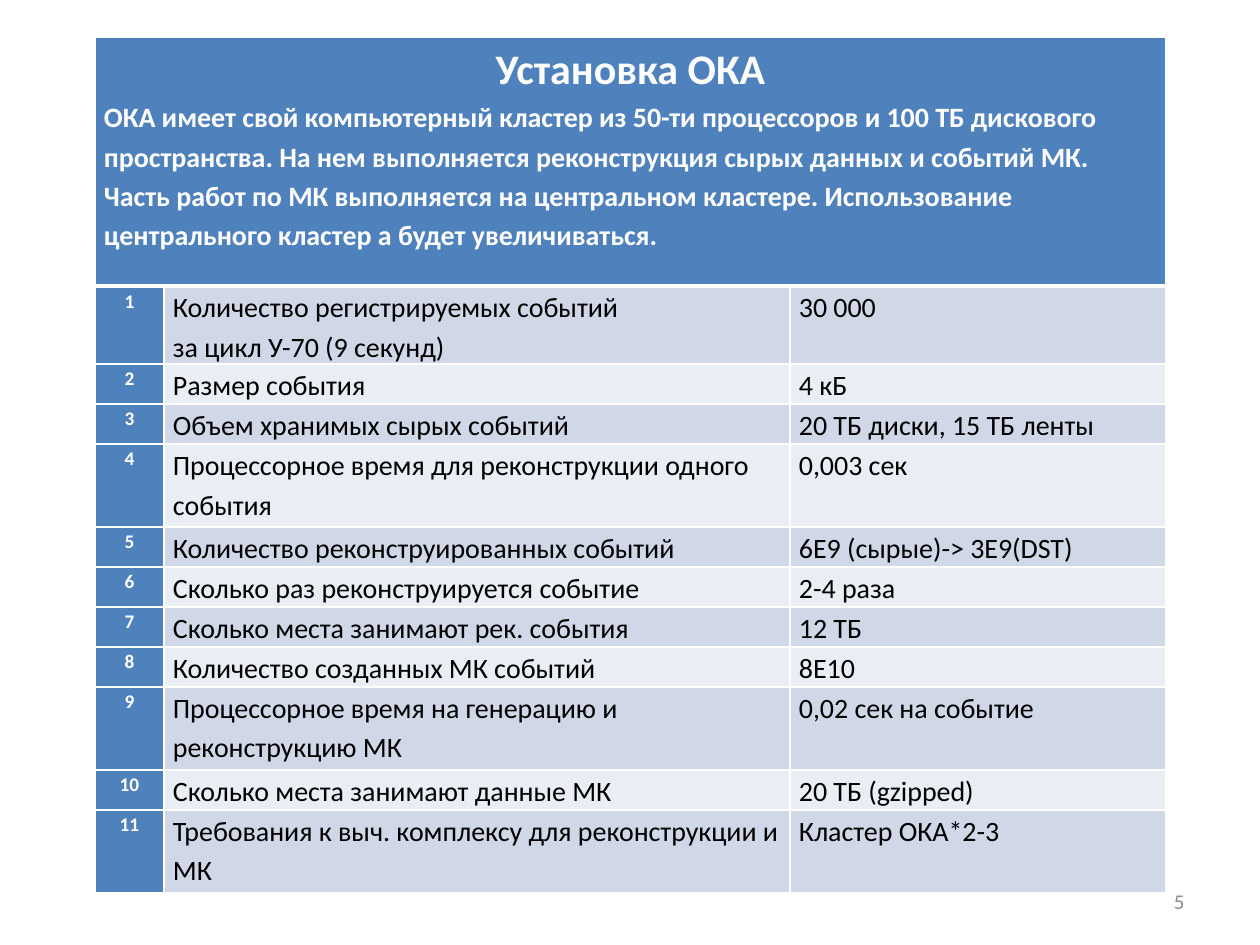
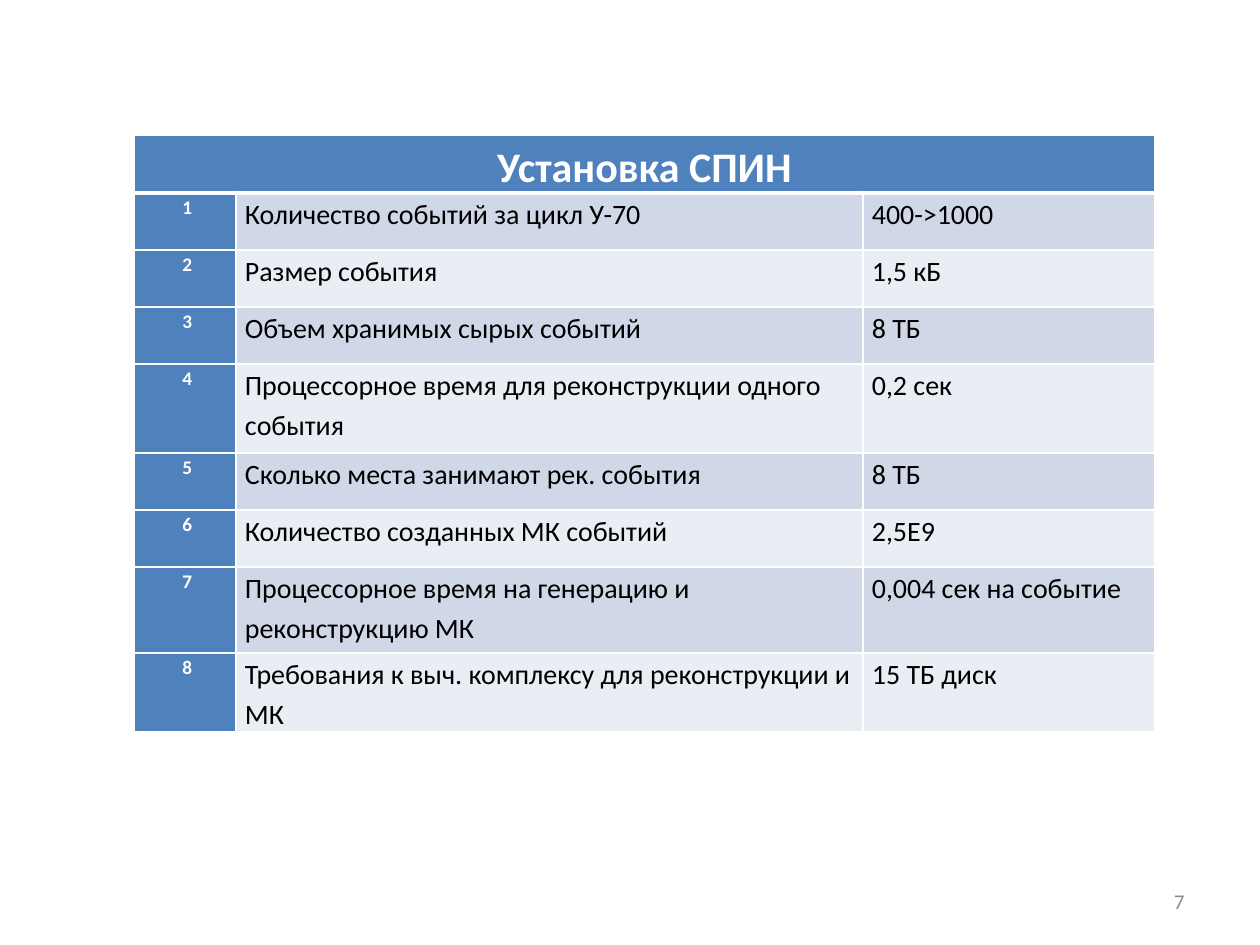
from lxml.etree import SubElement
from pptx import Presentation
from pptx.dml.color import RGBColor
from pptx.enum.text import MSO_ANCHOR as Anchor, PP_ALIGN as Align
from pptx.oxml.ns import qn
from pptx.util import Emu, Pt

ONE_LINE, TWO_LINES, ROOMY = 40, 83, 57
NO_BREAK_SPACE = chr(160)

# Each row: label lines, value, row height in px
SETUPS = [
    {
        "page_number": 5,
        "corner": (95, 37),
        "columns": (69, 626, 376),
        "title": "Установка ОКА",
        "summary": "ОКА имеет свой компьютерный кластер из 50-ти процессоров и 100 ТБ "
                   "дискового пространства. На нем выполняется реконструкция сырых данных "
                   "и событий МК. Часть работ по МК выполняется на центральном кластере. "
                   "Использование центрального кластер а будет увеличиваться.",
        "header_height": 249,
        "number_prefix": "",
        "rows": [
            (["Количество регистрируемых событий", "за цикл У-70 (9 секунд)"], "30 000", 78),
            (["Размер события"], "4 кБ", ONE_LINE),
            (["Объем хранимых сырых событий"], "20 ТБ диски, 15 ТБ ленты", ONE_LINE),
            (["Процессорное время для реконструкции одного события"], "0,003 сек", TWO_LINES),
            (["Количество реконструированных событий"], "6E9 (сырые)-> 3E9(DST)", ONE_LINE),
            (["Сколько раз реконструируется событие"], "2-4 раза", ONE_LINE),
            (["Сколько места занимают рек. события"], "12 TБ", ONE_LINE),
            (["Количество созданных МК событий"], "8E10", ONE_LINE),
            (["Процессорное время на генерацию и реконструкцию МК"],
             "0,02 сек на событие", TWO_LINES),
            (["Сколько места занимают данные МК"], "20 ТБ (gzipped)", ONE_LINE),
            (["Требования к выч. комплексу для реконструкции и МК"],
             "Кластер ОКА*2-3", TWO_LINES),
        ],
    },
    {
        "page_number": 7,
        "corner": (134, 135),
        "columns": (102, 627, 292),
        "title": "Установка СПИН",
        "summary": None,
        "header_height": ROOMY,
        "number_prefix": NO_BREAK_SPACE,
        "rows": [
            (["Количество событий за цикл У-70"], "400->1000", ROOMY),
            (["Размер события"], "1,5 кБ", ROOMY),
            (["Объем хранимых сырых событий"], "8 ТБ", ROOMY),
            (["Процессорное время для реконструкции одного события"], "0,2 сек", 89),
            (["Сколько места занимают рек. события"], "8 ТБ", ROOMY),
            (["Количество созданных МК событий"], "2,5Е9", ROOMY),
            (["Процессорное время на генерацию и реконструкцию МК"],
             "0,004 сек на событие", 86),
            (["Требования к выч. комплексу для реконструкции и МК"], "15 ТБ диск", 79),
        ],
    },
]

WHITE = RGBColor(0xFF, 0xFF, 0xFF)
BLACK = RGBColor(0, 0, 0)
GRAY = RGBColor(0x8C, 0x8C, 0x8C)
BLUE = RGBColor(0x4F, 0x81, 0xBD)
BANDS = (RGBColor(0xD0, 0xD8, 0xE8), RGBColor(0xE9, 0xED, 0xF4))

FONT = "Calibri"
TITLE = {"size": Pt(24), "bold": True, "color": WHITE, "align": Align.CENTER}
SUMMARY = {"size": Pt(16), "bold": True, "color": WHITE, "align": Align.LEFT}
NUMBER = {"size": Pt(11), "bold": True, "color": WHITE, "align": Align.CENTER}
BODY = {"size": Pt(16), "bold": False, "color": BLACK, "align": Align.LEFT}
FOOTER = {"size": Pt(12), "bold": False, "color": GRAY, "align": Align.RIGHT}

THIN, THICK = 1, 3
CELL_MARGINS = {"margin_left": 9, "margin_right": 9, "margin_top": 0, "margin_bottom": 0}


def px(length):
    return Emu(round(length * 914400 / 126))


def write(frame, lines, line_spacing=1.0):
    """Fill a text frame with (text, format) paragraphs."""
    for index, (text, look) in enumerate(lines):
        para = frame.add_paragraph() if index else frame.paragraphs[0]
        para.alignment = look["align"]
        para.line_spacing = line_spacing
        span = para.add_run()
        span.text = text
        span.font.name = FONT
        span.font.color.rgb = look["color"]
        for name in ("size", "bold"):
            setattr(span.font, name, look[name])


def add_borders(cell, top, bottom):
    properties = cell._tc.get_or_add_tcPr()
    for side, points in (("L", THIN), ("R", THIN), ("T", top), ("B", bottom)):
        line = SubElement(properties, qn(f"a:ln{side}"), w=str(Pt(points)))
        fill = SubElement(line, qn("a:solidFill"))
        SubElement(fill, qn("a:srgbClr"), val=str(WHITE))


def style_cell(cell, color, top=THIN, bottom=THIN):
    for name, margin in CELL_MARGINS.items():
        setattr(cell, name, px(margin))
    add_borders(cell, top, bottom)
    cell.fill.solid()
    cell.fill.fore_color.rgb = color


def add_setup_table(page, setup):
    rows, columns = setup["rows"], setup["columns"]
    heights = [setup["header_height"]] + [height for _, _, height in rows]
    left, top = setup["corner"]
    table = page.shapes.add_table(len(heights), len(columns), px(left), px(top),
                                  px(sum(columns)), px(sum(heights))).table
    table.first_row = table.horz_banding = False
    for column, width in zip(table.columns, columns):
        column.width = px(width)
    for row, height in zip(table.rows, heights):
        row.height = px(height)

    for cell in table.rows[0].cells:
        style_cell(cell, BLUE, bottom=THICK)
    header = table.cell(0, 0)
    header.merge(table.cell(0, len(columns) - 1))
    heading = [(setup["title"], TITLE)]
    if setup["summary"]:
        heading.append((setup["summary"], SUMMARY))
    write(header.text_frame, heading, 1.15)

    for number, (labels, value, _) in enumerate(rows, 1):
        band = BANDS[(number - 1) % 2]
        contents = [
            ([(f"{setup['number_prefix']}{number}", NUMBER)], BLUE),
            ([(label, BODY) for label in labels], band),
            ([(value, BODY)], band),
        ]
        for cell, (lines, color) in zip(table.rows[number].cells, contents):
            style_cell(cell, color, top=THICK if number == 1 else THIN)
            write(cell.text_frame, lines, 1.15)


def add_page_number(page, number):
    box = page.shapes.add_textbox(px(903), px(876), px(294), px(50))
    box.text_frame.word_wrap = True
    box.text_frame.vertical_anchor = Anchor.MIDDLE
    write(box.text_frame, [(str(number), FOOTER)])


def main():
    deck = Presentation()
    deck.slide_width, deck.slide_height = px(1260), px(945)
    for setup in SETUPS:
        page = deck.slides.add_slide(deck.slide_layouts[6])
        add_page_number(page, setup["page_number"])
        add_setup_table(page, setup)
    deck.save("out.pptx")


if __name__ == "__main__":
    main()
